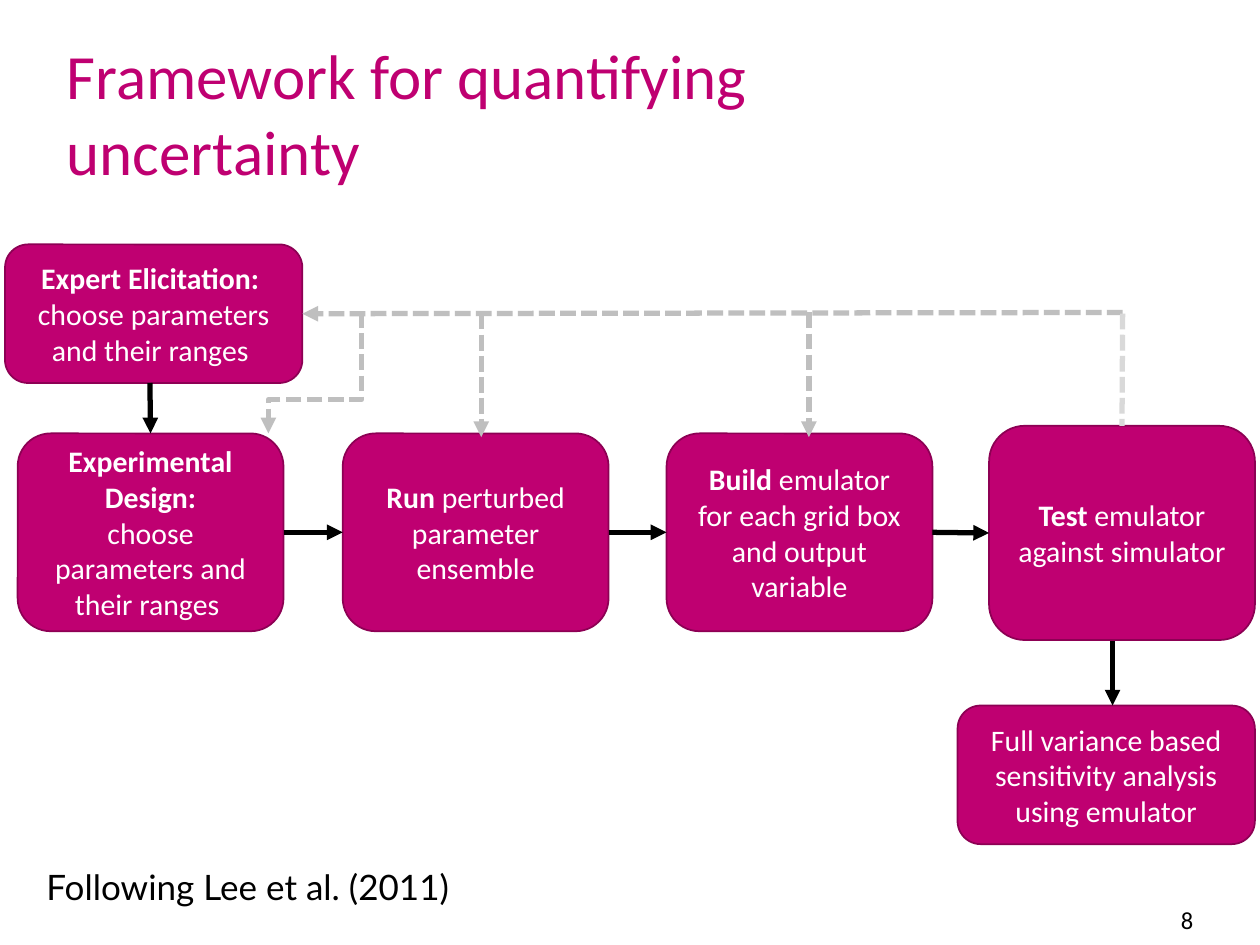
import pptx
import pptx.util
import pptx.dml.color
import pptx.enum.dml
import pptx.enum.shapes
import pptx.enum.text
import pptx.oxml.ns
from lxml import etree

Inches = pptx.util.Inches
Anchor = pptx.enum.text.MSO_ANCHOR
Align = pptx.enum.text.PP_ALIGN
Connector = pptx.enum.shapes.MSO_CONNECTOR
TOP, LEFT, BOTTOM, RIGHT = range(4)

THEME = {
    "magenta": "BF0071", "outline": "8D0054", "white": "FFFFFF", "black": "000000",
    "feedback": "BFBFBF", "faint": "D9D9D9",
    "font": "Calibri", "note_font": "Lato",
    "title": 36, "box": 17, "note": 20, "number": 14,
    "box_line": 1, "arrow_line": 3,
}

TITLE = "Framework for quantifying \vuncertainty"
NOTE = "Following Lee et al. (2011)"
NUMBER = "8"

WIDE, STEP = (2.36, 1.1), (2.11, 1.57)
BOXES = {
    "elicitation": ((0.04, 1.94), WIDE, [[("Expert Elicitation: ", True)],
                                         [("choose parameters and their ranges ", False)]]),
    "design": ((0.14, 3.44), STEP, [[("Experimental Design:", True)],
                                    [("choose parameters and their ranges ", False)]]),
    "run": ((2.72, 3.44), STEP, [[("Run", True), (" perturbed parameter ensemble", False)]]),
    "build": ((5.29, 3.44), STEP, [[("Build", True),
                                    (" emulator for each grid box and output variable", False)]]),
    "test": ((7.85, 3.38), (2.11, 1.7), [[("Test", True), (" emulator against simulator", False)]]),
    "analysis": ((7.6, 5.6), WIDE, [[("Full variance based sensitivity analysis using emulator", False)]]),
}

FLOW = [
    ((1.19, 3.04), ("design", TOP)),
    (("design", RIGHT), ("run", LEFT)),
    (("run", RIGHT), ("build", LEFT)),
    (("build", RIGHT), ("test", LEFT)),
    ((8.83, 5.09), (8.83, 5.6)),
]
FEEDBACK = [
    ((8.91, 2.48), ("elicitation", RIGHT), "feedback", True),
    ((8.91, 2.49), ("test", TOP), "faint", False),
    ((6.42, 2.48), (6.42, 3.47), "feedback", True),
    ((3.82, 2.49), (3.82, 3.47), "feedback", True),
]
ELBOW_START, ELBOW_END, ELBOW_TURN = (2.87, 2.48), (2.13, 3.44), 0.72


def color(name):
    return pptx.dml.color.RGBColor.from_string(THEME[name])


def style(paragraph, size, color_name, font="font", alignment=Align.LEFT):
    paragraph.alignment = alignment
    paragraph.font.name = THEME[font]
    paragraph.font.size = pptx.util.Pt(THEME[size])
    paragraph.font.color.rgb = color(color_name)


def add_text(slide, place, text, size, font, alignment):
    frame = slide.shapes.add_textbox(*map(Inches, place)).text_frame
    frame.word_wrap = True
    frame.text = text
    style(frame.paragraphs[0], size, "black", font, alignment)


def add_box(slide, position, size, paragraphs):
    shape = slide.shapes.add_shape(
        pptx.enum.shapes.MSO_SHAPE.ROUNDED_RECTANGLE, *map(Inches, position + size))
    shape.shadow.inherit = False
    shape.fill.solid()
    shape.fill.fore_color.rgb = color("magenta")
    shape.line.color.rgb = color("outline")
    shape.line.width = pptx.util.Pt(THEME["box_line"])
    frame = shape.text_frame
    frame.word_wrap = True
    frame.vertical_anchor = Anchor.MIDDLE
    for index, runs in enumerate(paragraphs):
        paragraph = frame.add_paragraph() if index else frame.paragraphs[0]
        for text, bold in runs:
            run = paragraph.add_run()
            run.text = text
            run.font.bold = bold
        style(paragraph, "box", "white", alignment=Align.CENTER)
    return shape


def add_line(slide, kind, start, end, color_name, dashed=False, arrow=True):
    connector = slide.shapes.add_connector(kind, *map(Inches, start + end))
    connector.line.color.rgb = color(color_name)
    connector.line.width = pptx.util.Pt(THEME["arrow_line"])
    if dashed:
        connector.line.dash_style = pptx.enum.dml.MSO_LINE.SQUARE_DOT
    properties = connector._element.spPr
    if arrow:
        line = properties.find(pptx.oxml.ns.qn("a:ln"))
        etree.SubElement(line, pptx.oxml.ns.qn("a:tailEnd"), type="triangle")
    etree.SubElement(properties, pptx.oxml.ns.qn("a:effectLst"))
    return connector


def link(slide, boxes, start, end, color_name, dashed=False, arrow=True):
    points = [(0, 0) if spot[0] in boxes else spot for spot in (start, end)]
    connector = add_line(slide, Connector.STRAIGHT, *points, color_name, dashed, arrow)
    if start[0] in boxes:
        connector.begin_connect(boxes[start[0]], start[1])
    if end[0] in boxes:
        connector.end_connect(boxes[end[0]], end[1])


def add_downward_elbow(slide, start, end, turn):
    center_x, center_y = (start[0] + end[0]) / 2, (start[1] + end[1]) / 2
    half_length, half_span = (end[1] - start[1]) / 2, (start[0] - end[0]) / 2
    connector = add_line(slide, Connector.ELBOW,
                         (center_x - half_length, center_y - half_span),
                         (center_x + half_length, center_y + half_span), "feedback", True)
    properties = connector._element.spPr
    properties.find(pptx.oxml.ns.qn("a:xfrm")).set("rot", "5400000")
    geometry = properties.find(pptx.oxml.ns.qn("a:prstGeom"))
    adjustments = geometry.find(pptx.oxml.ns.qn("a:avLst"))
    etree.SubElement(adjustments, pptx.oxml.ns.qn("a:gd"),
                     name="adj1", fmla=f"val {round(turn * 100000)}")


def main():
    presentation = pptx.Presentation()
    presentation.slide_width, presentation.slide_height = Inches(10), Inches(7.5)
    slide = presentation.slides.add_slide(presentation.slide_layouts[5])

    title = slide.shapes.title
    title.left, title.top, title.width, title.height = map(Inches, (0.43, 0.29, 6.77, 1.25))
    title.text_frame.text = TITLE
    title.text_frame.auto_size = pptx.enum.text.MSO_AUTO_SIZE.NONE
    title.text_frame.word_wrap = False
    title.text_frame.vertical_anchor = Anchor.BOTTOM
    style(title.text_frame.paragraphs[0], "title", "magenta")

    add_text(slide, (8.83, 7.13, 0.74, 0.52), NUMBER, "number", "font", Align.RIGHT)
    boxes = {name: add_box(slide, *content) for name, content in BOXES.items()}
    for start, end in FLOW:
        link(slide, boxes, start, end, "black")
    for start, end, color_name, arrow in FEEDBACK:
        link(slide, boxes, start, end, color_name, True, arrow)
    add_downward_elbow(slide, ELBOW_START, ELBOW_END, ELBOW_TURN)
    add_text(slide, (0.27, 6.82, 3.7, 0.44), NOTE, "note", "note_font", Align.LEFT)

    presentation.save("out.pptx")


if __name__ == "__main__":
    main()
